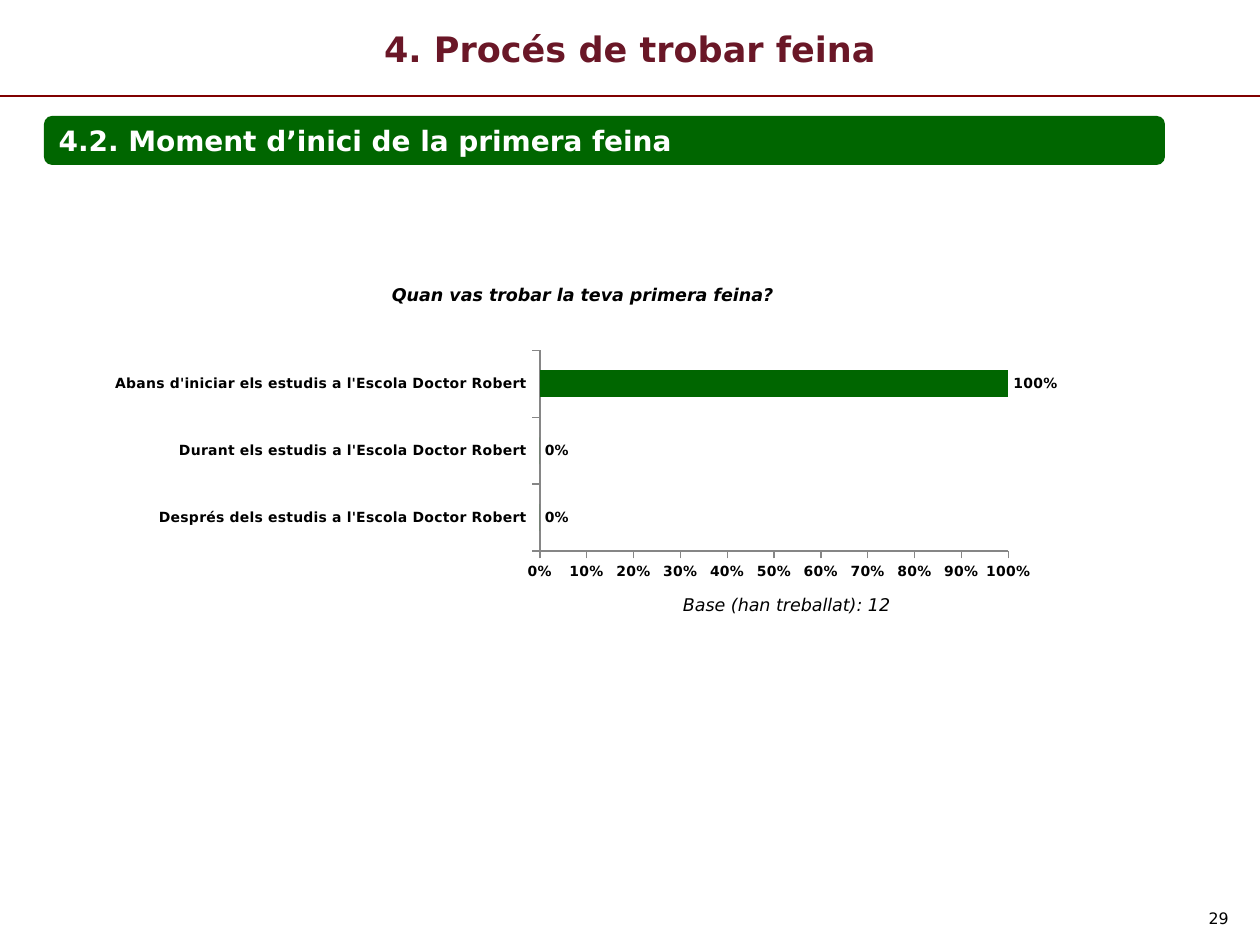
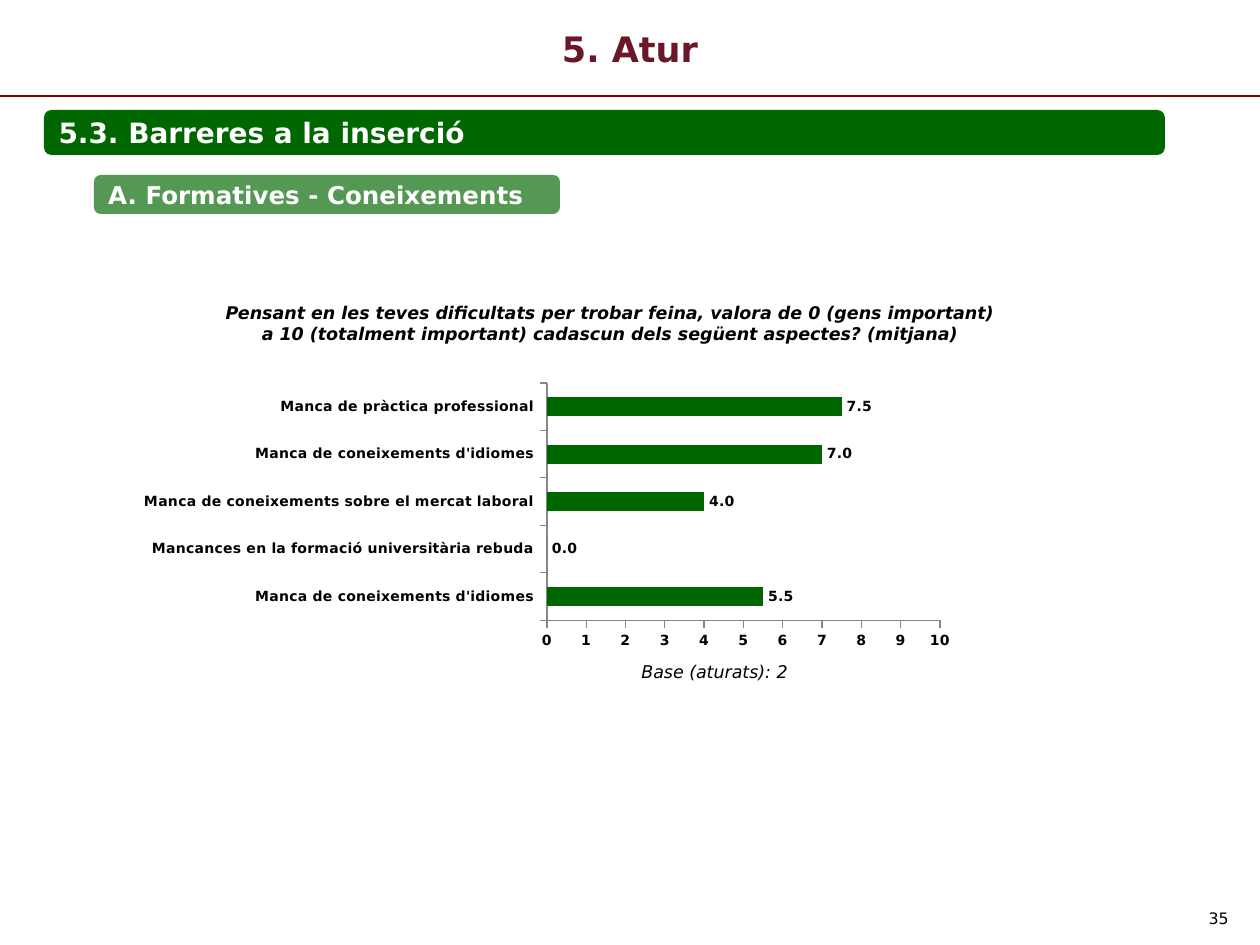
"""Builds two survey slides, each with a green heading band and a bar chart."""
from lxml import etree
from pptx import Presentation
from pptx.chart.data import CategoryChartData as Data
from pptx.dml.color import RGBColor
from pptx.enum.chart import XL_CHART_TYPE as Kind, XL_LABEL_POSITION as Spot, XL_TICK_MARK as Tick
from pptx.enum.shapes import MSO_CONNECTOR as Wire, MSO_SHAPE as Form
from pptx.enum.text import MSO_ANCHOR as Anchor, PP_ALIGN as Align
from pptx.oxml import parse_xml
from pptx.oxml.ns import qn
from pptx.util import Pt

PX = 914400 / 126
FONT = "DejaVu Sans"
GREEN, WINE, RED, GREY, BLACK, WHITE = "006600", "6A1727", "800000", "868686", "000000", "FFFFFF"
CHART_NS = "http://schemas.openxmlformats.org/drawingml/2006/chart"


def px(*vals):
    return [round(v * PX) for v in vals]


def write(shape, text, size, tint, align, bold=False, slant=False):
    shape.text_frame.text = text
    for para in shape.text_frame.paragraphs:
        para.alignment = align
        for run in para.runs:
            font = run.font
            font.name, font.size, font.bold, font.italic = FONT, Pt(size), bold, slant
            font.color.rgb = RGBColor.from_string(tint)


school = "els estudis a l'Escola Doctor Robert"
pages = [
    dict(
        title="4. Procés de trobar feina", page="29",
        bands=[("4.2. Moment d’inici de la primera feina", 16, 100, (44, 116, 1121, 49))],
        ask="Quan vas trobar la teva primera feina?", ask_box=(379, 278, 407, 34),
        base="Base (han treballat): 12", base_box=(583, 588, 407, 34),
        box=(115, 333, 973, 256), plot=(0.435, 0.068, 0.483, 0.784),
        rows=[("Després dels" + school[3:], 0), ("Durant " + school, 0),
              ("Abans d'iniciar " + school, 1)],
        top=1, step=0.1, scale="0%", label="0%"),
    dict(
        title="5. Atur", page="35",
        bands=[("5.3. Barreres a la inserció", 16, 100, (44, 110, 1121, 45)),
               ("A. Formatives - Coneixements", 14, 67, (94, 175, 466, 39))],
        ask="Pensant en les teves dificultats per trobar feina, valora de 0 (gens important)\n"
            "a 10 (totalment important) cadascun dels següent aspectes? (mitjana)",
        ask_box=(209, 296, 801, 55),
        base="Base (aturats): 2", base_box=(511, 655, 407, 34),
        box=(127, 378, 840, 277), plot=(0.5, 0.018, 0.468, 0.857),
        rows=[("Manca de coneixements d'idiomes", 5.5),
              ("Mancances en la formació universitària rebuda", 0),
              ("Manca de coneixements sobre el mercat laboral", 4),
              ("Manca de coneixements d'idiomes", 7),
              ("Manca de pràctica professional", 7.5)],
        top=10, step=1, scale="#,##0", label="0.0"),
]

deck = Presentation()
deck.slide_width, deck.slide_height = px(1260, 945)

for page in pages:
    slide = deck.slides.add_slide(deck.slide_layouts[5])
    shapes = slide.shapes

    title = shapes.title
    title.left, title.top, title.width, title.height = px(0, 0, 1260, 96)
    title.text_frame.vertical_anchor = Anchor.MIDDLE
    write(title, page["title"], 20, WINE, Align.CENTER, bold=True)

    rule = shapes.add_connector(Wire.STRAIGHT, *px(0, 96, 1260, 96))
    rule.line.color.rgb = RGBColor.from_string(RED)
    rule.line.width = Pt(1.5)
    etree.SubElement(rule._element.spPr, qn("a:effectLst"))

    for text, size, alpha, box in page["bands"]:
        band = shapes.add_shape(Form.ROUNDED_RECTANGLE, *px(*box))
        band.shadow.inherit = False
        band.fill.solid()
        band.fill.fore_color.rgb = RGBColor.from_string(GREEN)
        band.line.fill.background()
        if alpha < 100:
            tone = band._element.spPr.find(".//" + qn("a:srgbClr"))
            etree.SubElement(tone, qn("a:alpha"), val=str(alpha * 1000))
        band.text_frame.vertical_anchor = Anchor.MIDDLE
        write(band, text, size, WHITE, Align.LEFT, bold=True)

    notes = [(page["ask"], page["ask_box"], 10, Align.CENTER, True, True),
             (page["base"], page["base_box"], 10, Align.CENTER, False, True),
             (page["page"], (948, 903, 293, 26), 9, Align.RIGHT, False, False)]
    for text, box, size, align, bold, slant in notes:
        note = shapes.add_textbox(*px(*box))
        note.text_frame.word_wrap = not bold
        write(note, text, size, BLACK, align, bold, slant)

    data = Data()
    data.categories = [name for name, val in page["rows"]]
    data.add_series("Series 1", [val for name, val in page["rows"]])
    chart = shapes.add_chart(Kind.BAR_CLUSTERED, *px(*page["box"]), data).chart
    chart.has_legend = chart.has_title = False
    chart.font.name, chart.font.size, chart.font.bold = FONT, Pt(8), True
    chart.font.color.rgb = RGBColor.from_string(BLACK)

    area = chart._chartSpace.chart.plotArea
    for old in area.findall(qn("c:layout")):
        area.remove(old)
    marks = "".join(f'<c:{key}Mode val="edge"/>' for key in "xy")
    marks += "".join(f'<c:{key} val="{val}"/>' for key, val in zip("xywh", page["plot"]))
    area.insert(0, parse_xml(
        f'<c:layout xmlns:c="{CHART_NS}"><c:manualLayout>'
        f'<c:layoutTarget val="inner"/>{marks}</c:manualLayout></c:layout>'))

    for axis in (chart.category_axis, chart.value_axis):
        axis.has_major_gridlines = False
        axis.major_tick_mark, axis.minor_tick_mark = Tick.OUTSIDE, Tick.NONE
        axis.format.line.color.rgb = RGBColor.from_string(GREY)
        axis.format.line.width = Pt(0.75)
    axis.minimum_scale, axis.maximum_scale = 0, page["top"]
    axis.major_unit = page["step"]
    axis.tick_labels.number_format = page["scale"]
    axis.tick_labels.number_format_is_linked = False

    plot = chart.plots[0]
    plot.gap_width, plot.vary_by_categories = 150, False
    fill = plot.series[0].format.fill
    fill.solid()
    fill.fore_color.rgb = RGBColor.from_string(GREEN)
    plot.has_data_labels = True
    labels = plot.data_labels
    labels.show_value, labels.position = True, Spot.OUTSIDE_END
    labels.number_format, labels.number_format_is_linked = page["label"], False
    labels.font.name, labels.font.size, labels.font.bold = FONT, Pt(8), True

deck.save("out.pptx")
